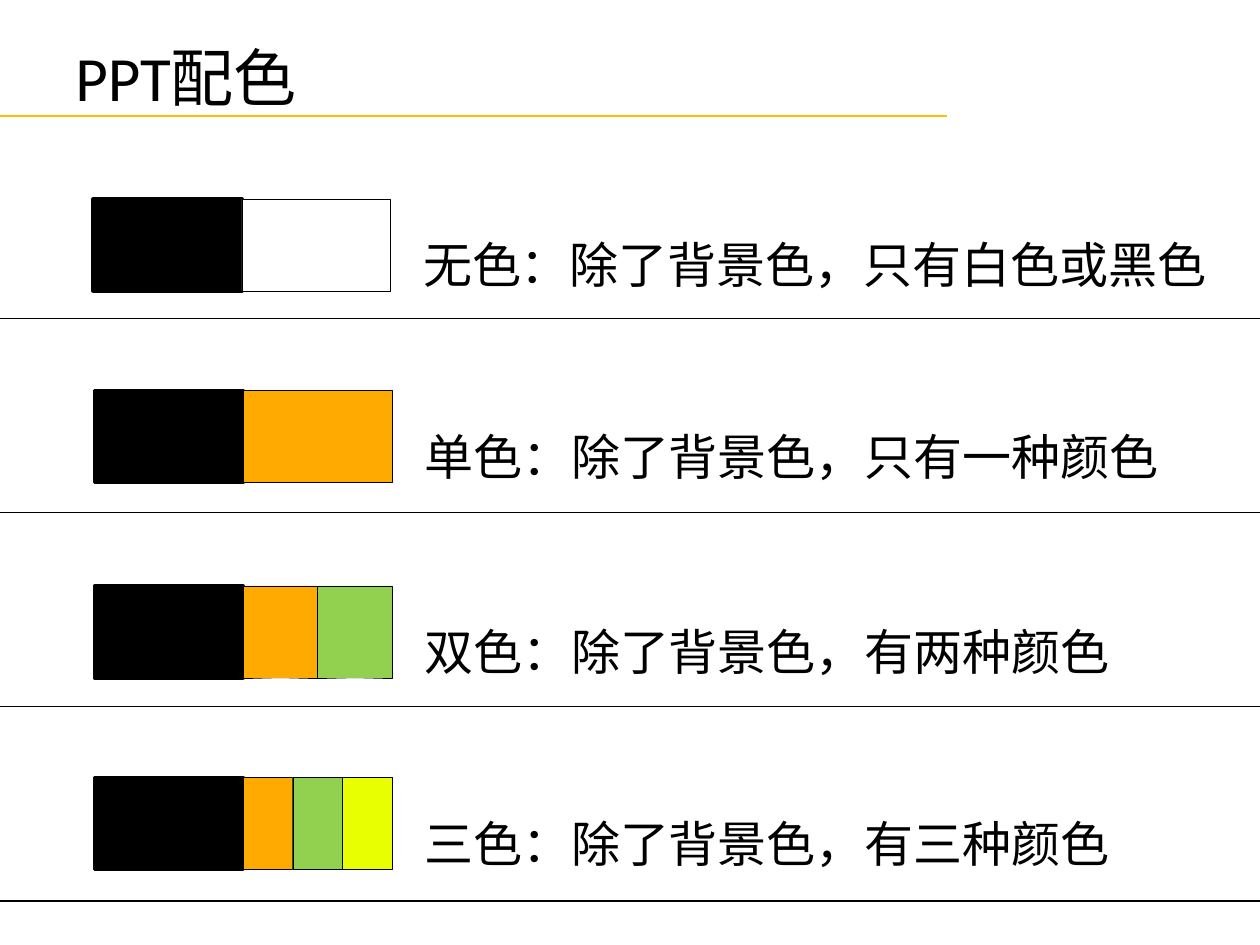
from dataclasses import dataclass

import pptx
import pptx.dml.color
import pptx.enum.shapes
import pptx.enum.text
import pptx.oxml.ns
import pptx.util
from lxml import etree

Inches = pptx.util.Inches
Pt = pptx.util.Pt

BLACK, WHITE, GOLD = "000000", "FFFFFF", "FFC000"
ORANGE, GREEN, LIME = "FFAA01", "92D050", "E7FF01"
FONT = "Calibri"
HALF, HIGH = 1.18, 0.73  # each bar is a black half and a colour half


@dataclass
class Row:
    left: float
    top: float
    text: str
    hues: tuple[str, ...]


ROWS = [
    Row(0.74, 1.58, "无色：除了背景色，只有白色或黑色", (WHITE,)),
    Row(0.75, 3.1, "单色：除了背景色，只有一种颜色", (ORANGE,)),
    Row(0.75, 4.65, "双色：除了背景色，有两种颜色", (ORANGE, GREEN)),
    Row(0.75, 6.17, "三色：除了背景色，有三种颜色", (ORANGE, GREEN, LIME)),
]


def color(code: str) -> pptx.dml.color.RGBColor:
    return pptx.dml.color.RGBColor.from_string(code)


def add_rule(shapes, y: float, end: float, code: str, width: float) -> None:
    line = shapes.add_connector(
        pptx.enum.shapes.MSO_CONNECTOR.STRAIGHT,
        Inches(0), Inches(y), Inches(end), Inches(y))
    line.line.color.rgb = color(code)
    line.line.width = Pt(width)
    props = line._element.spPr
    etree.SubElement(props, pptx.oxml.ns.qn("a:effectLst"))


def add_box(shapes, left: float, top: float, width: float,
            fill: str, edge: float) -> None:
    box = shapes.add_shape(
        pptx.enum.shapes.MSO_SHAPE.RECTANGLE,
        Inches(left), Inches(top), Inches(width), Inches(HIGH))
    box.shadow.inherit = False
    box.fill.solid()
    box.fill.fore_color.rgb = color(fill)
    box.line.color.rgb = color(BLACK)
    box.line.width = Pt(edge)


def add_text(shapes, left: float, top: float, width: float, height: float,
             text: str, size: float):
    frame = shapes.add_textbox(
        Inches(left), Inches(top), Inches(width), Inches(height)).text_frame
    frame.word_wrap = True
    run = frame.paragraphs[0].add_run()
    run.text = text
    run.font.name = FONT
    run.font.size = Pt(size)
    run.font.color.rgb = color(BLACK)
    return frame


def add_row(shapes, row: Row) -> None:
    group = shapes.add_group_shape().shapes
    frame = add_text(group, row.left + 2.52, row.top, 6.46, 0.81, row.text, 28)
    frame.auto_size = pptx.enum.text.MSO_AUTO_SIZE.SHAPE_TO_FIT_TEXT
    para = frame.paragraphs[0]
    para.line_spacing = 1.5
    para.space_before = Pt(30)

    # Black half, then the hues share the other half
    add_box(group, row.left, row.top, HALF, BLACK, 2)
    part = HALF / len(row.hues)
    for i, hue in enumerate(row.hues):
        add_box(group, row.left + HALF + i * part, row.top, part, hue, 0.25)


def main() -> None:
    deck = pptx.Presentation()
    deck.slide_width, deck.slide_height = Inches(10), Inches(7.5)
    shapes = deck.slides.add_slide(deck.slide_layouts[6]).shapes

    # Title with its rule
    add_rule(shapes, 0.92, 7.52, GOLD, 1.5)
    title = add_text(shapes, 0.5, 0.21, 9, 0.79, "PPT配色", 36)
    title.vertical_anchor = pptx.enum.text.MSO_ANCHOR.MIDDLE

    # Colour schemes, each closed by a thin rule
    for i, row in enumerate(ROWS):
        add_row(shapes, row)
        add_rule(shapes, 2.53 + i * 1.54, 10, BLACK, 0.75)

    deck.save("out.pptx")


if __name__ == "__main__":
    main()
